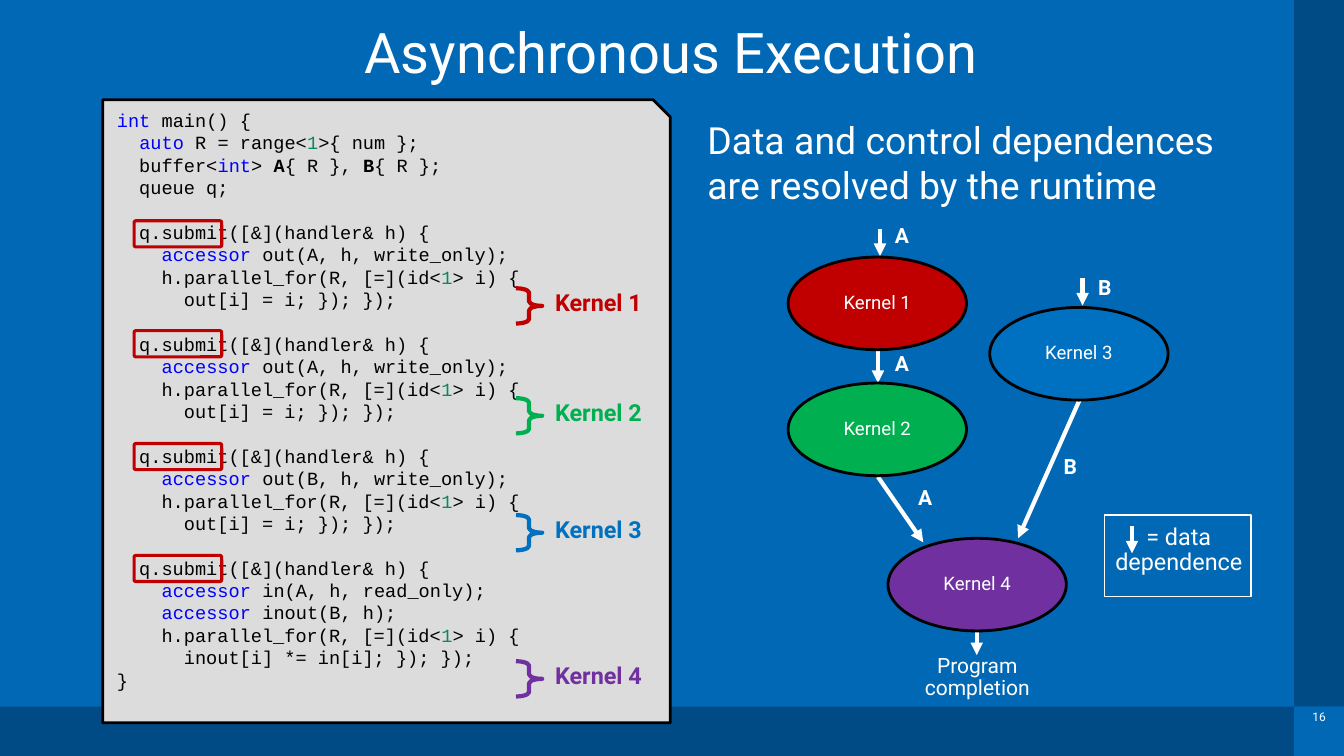
from dataclasses import dataclass
from itertools import groupby
from typing import Optional

from lxml.etree import SubElement
from pptx import Presentation
from pptx.dml.color import RGBColor
from pptx.enum.shapes import MSO_CONNECTOR, MSO_SHAPE
from pptx.enum.text import MSO_ANCHOR, PP_ALIGN
from pptx.oxml.ns import qn
from pptx.util import Pt

WHITE = RGBColor(0xFF, 0xFF, 0xFF)
BLACK = RGBColor(0, 0, 0)
BACKGROUND = RGBColor(0x00, 0x68, 0xB5)
NAVY = RGBColor(0x00, 0x4A, 0x86)
PANEL = RGBColor(0xDC, 0xDC, 0xDC)
KEYWORD = RGBColor(0x00, 0x00, 0xFF)
NUMBER = RGBColor(0x09, 0x88, 0x5A)
RED = RGBColor(0xC0, 0x00, 0x00)
GREEN = RGBColor(0x00, 0xB0, 0x50)
BLUE = RGBColor(0x00, 0x70, 0xC0)
PURPLE = RGBColor(0x70, 0x30, 0xA0)

CODE_PITCH = 16
CODE_COLORS = {"int": KEYWORD, "auto": KEYWORD, "accessor": KEYWORD, "1": NUMBER}
CODE = """int main() {
  auto R = range<1>{ num };
  buffer<int> A{ R }, B{ R };
  queue q;

  q.submit([&](handler& h) {
    accessor out(A, h, write_only);
    h.parallel_for(R, [=](id<1> i) {
      out[i] = i; }); });

  q.submit([&](handler& h) {
    accessor out(A, h, write_only);
    h.parallel_for(R, [=](id<1> i) {
      out[i] = i; }); });

  q.submit([&](handler& h) {
    accessor out(B, h, write_only);
    h.parallel_for(R, [=](id<1> i) {
      out[i] = i; }); });

  q.submit([&](handler& h) {
    accessor in(A, h, read_only);
    accessor inout(B, h);
    h.parallel_for(R, [=](id<1> i) {
      inout[i] *= in[i]; }); });
}"""


@dataclass
class Kernel:
    name: str
    color: RGBColor
    x: float
    y: float
    brace_y: float
    submit_y: float


@dataclass
class Arrow:
    x1: float
    y1: float
    x2: float
    y2: float


@dataclass
class Label:
    text: str
    box: tuple
    size: float
    color: RGBColor = WHITE
    bold: bool = False
    align: PP_ALIGN = PP_ALIGN.CENTER
    anchor: MSO_ANCHOR = MSO_ANCHOR.TOP
    spacing: float = 0.9
    inset: tuple = (0, 0, 0, 0)


KERNELS = [
    Kernel("Kernel 1", RED, 563, 183.6, 205.9, 157.7),
    Kernel("Kernel 2", GREEN, 563, 273.6, 284.4, 236.2),
    Kernel("Kernel 3", BLUE, 707, 219.6, 367.9, 316.8),
    Kernel("Kernel 4", PURPLE, 634.3, 384.5, 472.3, 396.7),
]
ARROWS = [
    Arrow(808.6, 375.8, 808.6, 395.3),
    Arrow(627.1, 340.6, 659.5, 387.4),
    Arrow(771.1, 285.8, 727.2, 384.5),
    Arrow(697.7, 448.6, 697.7, 468),
    Arrow(627.1, 250.6, 627.1, 273.6),
    Arrow(628.6, 163.4, 628.6, 182.9),
    Arrow(773.3, 198.7, 773.3, 218.2),
]
BUFFERS = [("A", 635, 252.7), ("A", 651.6, 347.8), ("B", 755.3, 326.2),
           ("A", 635, 161.3), ("B", 779.8, 198)]
LABELS = [
    Label("16", (935.3, 493.9, 16.6, 36.7), 8.5, align=PP_ALIGN.LEFT,
          anchor=MSO_ANCHOR.MIDDLE, inset=(2.2, 2.2, 2.2, 2.2)),
    Label("Asynchronous Execution", (45.4, 18, 867.6, 69.1), 40),
    Label("Program completion", (650.2, 468, 95.8, 36), 15),
    Label("= data dependence", (771.8, 375.1, 140.4, 40.3), 16.7, inset=(18, 0, 18, 0)),
    Label("Data and control dependences are resolved by the runtime",
          (498.2, 79.9, 395.3, 77.8), 26.7, align=PP_ALIGN.LEFT, spacing=1,
          inset=(7.2, 3.6, 7.2, 3.6)),
    *[Label(text, (x, y, 18.7, 18), 15, bold=True) for text, x, y in BUFFERS],
    *[Label(k.name, (396.5, k.brace_y + 2.4, 87.1, 20.2), 16.7, k.color, True, PP_ALIGN.LEFT)
      for k in KERNELS],
]


def apply(target, values: dict) -> None:
    for name, value in values.items():
        setattr(target, name, value)


def add_run(p, text: str, size: float, color: RGBColor, bold: bool = False,
            name: str = "Roboto") -> None:
    r = p.add_run()
    r.text = text
    apply(r.font, {"name": name, "size": Pt(size), "bold": bold})
    r.font.color.rgb = color


def set_frame(tf, inset: tuple, anchor: MSO_ANCHOR) -> None:
    left, top, right, bottom = map(Pt, inset)
    apply(tf, {"word_wrap": True, "vertical_anchor": anchor, "margin_left": left,
               "margin_top": top, "margin_right": right, "margin_bottom": bottom})


def add_shape(s, kind: MSO_SHAPE, box: tuple, fill: Optional[RGBColor] = None,
              line: Optional[RGBColor] = None, width: float = 1, adjust: tuple = ()):
    sp = s.shapes.add_shape(kind, *map(Pt, box))
    sp.shadow.inherit = False
    for i, value in enumerate(adjust):
        sp.adjustments[i] = value
    if fill is None:
        sp.fill.background()
    else:
        sp.fill.solid()
        sp.fill.fore_color.rgb = fill
    if line is None:
        sp.line.fill.background()
    else:
        sp.line.color.rgb = line
        sp.line.width = Pt(width)
    return sp


def add_label(s, label: Label) -> None:
    tf = s.shapes.add_textbox(*map(Pt, label.box)).text_frame
    set_frame(tf, label.inset, label.anchor)
    p = tf.paragraphs[0]
    apply(p, {"alignment": label.align, "line_spacing": label.spacing})
    add_run(p, label.text, label.size, label.color, label.bold)


def add_arrow(s, arrow: Arrow) -> None:
    cx = s.shapes.add_connector(MSO_CONNECTOR.STRAIGHT, Pt(arrow.x1), Pt(arrow.y1),
                                Pt(arrow.x2), Pt(arrow.y2))
    cx.line.color.rgb = WHITE
    cx.line.width = Pt(3)
    SubElement(cx.line._get_or_add_ln(), qn("a:tailEnd"), type="triangle")
    SubElement(cx._element.spPr, qn("a:effectLst"))


def add_code(s) -> None:
    tf = add_shape(s, MSO_SHAPE.RECTANGLE, (83.5, 77.8, 387.4, 419.8), PANEL).text_frame
    set_frame(tf, (0, 0, 0, 0), MSO_ANCHOR.TOP)
    p = tf.paragraphs[0]
    for block_no, block in enumerate(CODE.split("\n\n")):
        for line_no, line in enumerate(block.splitlines()):
            if block_no or line_no:
                p = tf.add_paragraph()
            if block_no and not line_no:
                p.space_before = Pt(CODE_PITCH)
            apply(p, {"alignment": PP_ALIGN.LEFT, "line_spacing": Pt(CODE_PITCH)})
            declares = "buffer" in line
            words = ["".join(chars) for _, chars in groupby(line, str.isalnum)]
            styles = [(CODE_COLORS.get(w, BLACK), declares and w in ("A", "B")) for w in words]
            for (color, bold), pairs in groupby(zip(styles, words), lambda pair: pair[0]):
                add_run(p, "".join(w for _, w in pairs), 13.3, color, bold, "Courier New")


def main() -> None:
    prs = Presentation()
    apply(prs, {"slide_width": Pt(960), "slide_height": Pt(540)})
    s = prs.slides.add_slide(prs.slide_layouts[6])
    s.background.fill.solid()
    s.background.fill.fore_color.rgb = BACKGROUND
    for box, color in [((0, 504.7, 924.5, 35.3), NAVY), ((924.5, 0, 35.5, 504.7), NAVY),
                       ((924.5, 504.7, 35.5, 35.3), BACKGROUND)]:
        add_shape(s, MSO_SHAPE.RECTANGLE, box, color)
    for arrow in ARROWS:
        add_arrow(s, arrow)
    add_shape(s, MSO_SHAPE.SNIP_1_RECTANGLE, (73.4, 71.3, 405.4, 445), PANEL, BLACK, 2, (0.03,))
    add_code(s)
    for k in KERNELS:
        sp = add_shape(s, MSO_SHAPE.OVAL, (k.x, k.y, 127.4, 66.2), k.color, BLACK, 2)
        sp.text_frame.vertical_anchor = MSO_ANCHOR.MIDDLE
        p = sp.text_frame.paragraphs[0]
        apply(p, {"alignment": PP_ALIGN.CENTER, "line_spacing": 0.9})
        add_run(p, k.name, 13.3, WHITE)
        add_shape(s, MSO_SHAPE.RIGHT_BRACE, (368.6, k.brace_y, 18.7, 25.2), None, k.color, 3,
                  (0.17, 0.5))
        add_shape(s, MSO_SHAPE.ROUNDED_RECTANGLE, (95.8, k.submit_y, 62.6, 18.7), None, RED, 2.25,
                  (0.07,))
    add_shape(s, MSO_SHAPE.RECTANGLE, (789.1, 367.9, 104.4, 58.3), None, WHITE)
    for label in LABELS:
        add_label(s, label)
    prs.save("out.pptx")


if __name__ == "__main__":
    main()
